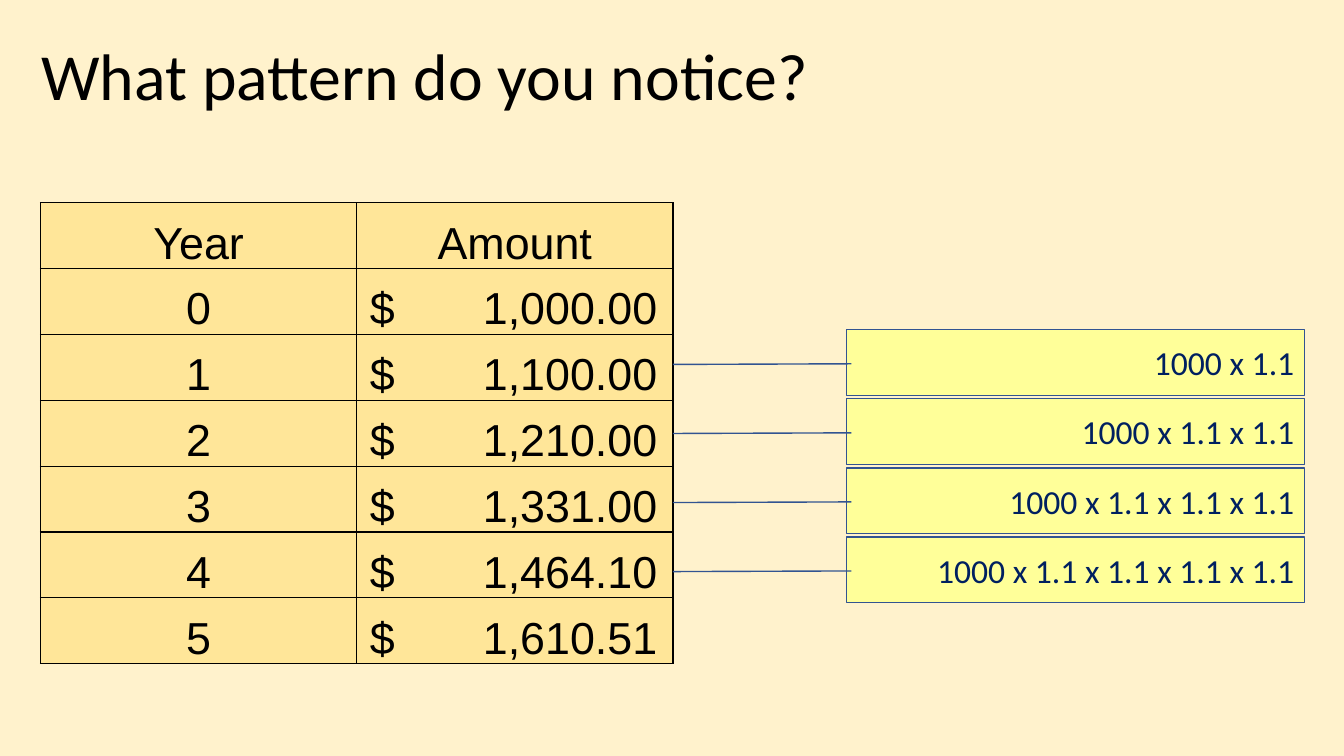
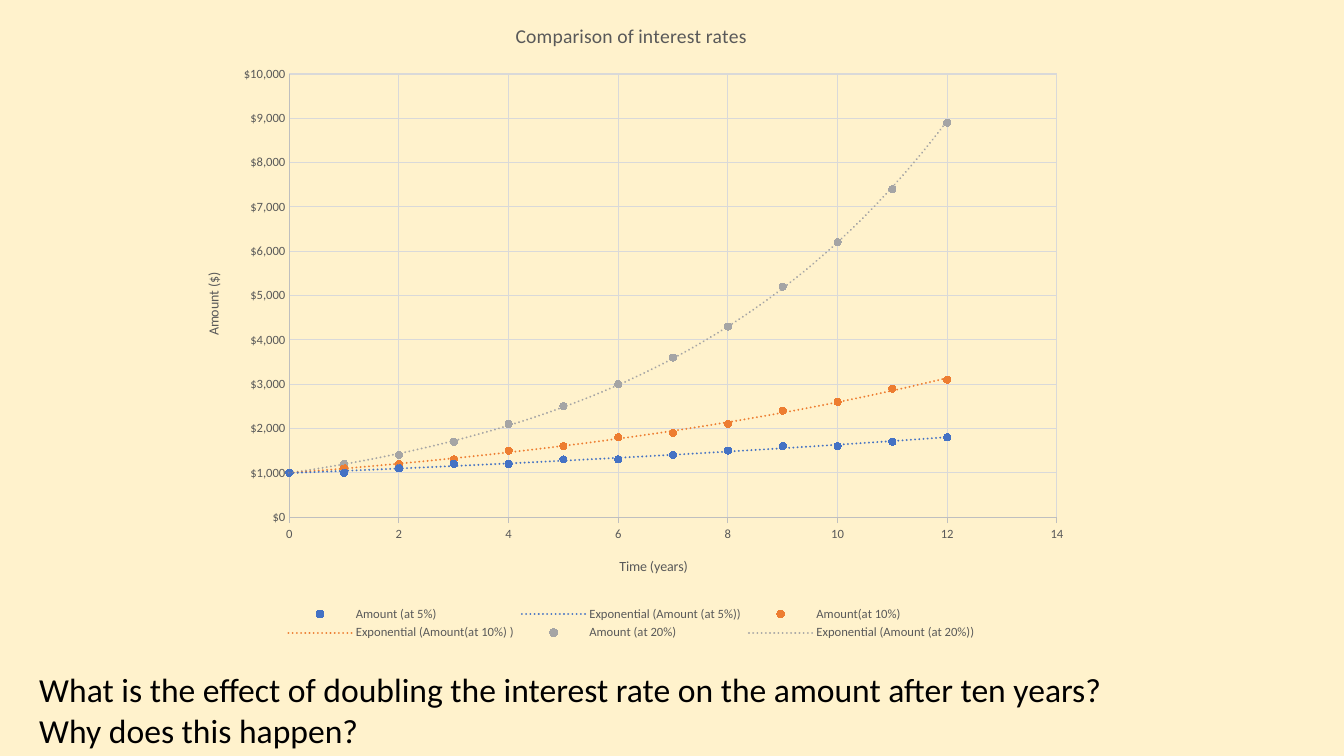
from dataclasses import dataclass

from lxml.etree import SubElement
from pptx import Presentation
from pptx.chart.data import XyChartData
from pptx.dml.color import RGBColor
from pptx.enum.chart import XL_CHART_TYPE, XL_LEGEND_POSITION, XL_MARKER_STYLE, XL_TICK_MARK
from pptx.enum.shapes import MSO_SHAPE
from pptx.enum.text import MSO_ANCHOR, PP_ALIGN
from pptx.oxml import parse_xml
from pptx.oxml.ns import nsdecls, qn
from pptx.util import Cm, Pt

CREAM = RGBColor(0xFF, 0xF2, 0xCC)
GOLD = RGBColor(0xFF, 0xE6, 0x99)
YELLOW = RGBColor(0xFF, 0xFF, 0x99)
BLACK = RGBColor(0x00, 0x00, 0x00)
NAVY = RGBColor(0x00, 0x20, 0x60)
CALLOUT_EDGE = RGBColor(0x32, 0x54, 0x91)
GREY_TEXT = RGBColor(0x59, 0x59, 0x59)
AXIS_GREY = RGBColor(0xBF, 0xBF, 0xBF)
GRID_GREY = RGBColor(0xD9, 0xD9, 0xD9)
BLUE = RGBColor(0x44, 0x72, 0xC4)
ORANGE = RGBColor(0xED, 0x7D, 0x31)
SILVER = RGBColor(0xA5, 0xA5, 0xA5)

BODY_FONT = "Calibri"
TABLE_FONT = "Arial"
PRINCIPAL = 1000
TABLE_YEARS = range(6)
CALLOUT_YEARS = range(1, 5)
CHART_YEARS = range(13)


@dataclass(frozen=True)
class Box:
    left: float
    top: float
    width: float
    height: float

    def lengths(self) -> tuple:
        return Cm(self.left), Cm(self.top), Cm(self.width), Cm(self.height)


@dataclass(frozen=True)
class RateSeries:
    name: str
    growth: float
    color: RGBColor


@dataclass(frozen=True)
class AxisStyle:
    title: str
    maximum: int
    step: int
    number_format: str
    tick: XL_TICK_MARK


TITLE_BOX = Box(0.79, 0.74, 28.75, 2.26)
TABLE_BOX = Box(1.02, 5.11, 15.94, 11.62)
FIRST_CALLOUT = Box(21.34, 8.31, 11.53, 1.65)
CALLOUT_PITCH = 1.74
CALLOUT_ADJUSTMENTS = (0.52, 0.01, 0.53, -0.38)
CHART_BOX = Box(4.57, 0, 22.68, 16.23)
QUESTION_BOX = Box(0.74, 16.74, 33.12, 2.31)
PLOT_AREA = {"x": 0.12, "y": 0.115, "w": 0.853, "h": 0.688}

RATES = (
    RateSeries("Amount (at 5%)", 1.05, BLUE),
    RateSeries("Amount(at 10%) ", 1.1, ORANGE),
    RateSeries("Amount (at 20%)", 1.2, SILVER),
)
TIME_AXIS = AxisStyle("Time (years)", 14, 2, "General", XL_TICK_MARK.OUTSIDE)
AMOUNT_AXIS = AxisStyle("Amount ($)", 10000, 1000, '"$"#,##0', XL_TICK_MARK.NONE)


def amount_after(years: int, growth: float) -> float:
    return PRINCIPAL * growth ** years


def set_font(font, size: float, color: RGBColor, name: str = BODY_FONT) -> None:
    font.name = name
    font.size = Pt(size)
    font.bold = False
    font.color.rgb = color


def write(frame, text: str, size: float, color: RGBColor, name: str = BODY_FONT,
          align: PP_ALIGN = PP_ALIGN.LEFT) -> None:
    frame.text = text
    frame.word_wrap = True
    for para in frame.paragraphs:
        para.alignment = align
        for span in para.runs:
            set_font(span.font, size, color, name)


def set_line(line, color: RGBColor, width: float) -> None:
    line.color.rgb = color
    line.width = Pt(width)


def add_title(page, text: str) -> None:
    title = page.shapes.title
    title.left, title.top, title.width, title.height = TITLE_BOX.lengths()
    write(title.text_frame, text, 47, BLACK)
    title.text_frame.vertical_anchor = MSO_ANCHOR.TOP


def add_cell_borders(cell) -> None:
    properties = cell._tc.get_or_add_tcPr()
    for index, side in enumerate(("lnL", "lnR", "lnT", "lnB")):
        properties.insert(index, parse_xml(
            f'<a:{side} {nsdecls("a")} w="{Pt(1)}"><a:solidFill>'
            f'<a:srgbClr val="{BLACK}"/></a:solidFill></a:{side}>'))


def add_right_tab(para, position: float) -> None:
    tabs = SubElement(para._p.get_or_add_pPr(), qn("a:tabLst"))
    SubElement(tabs, qn("a:tab"), pos=str(Cm(position)), algn="r")


def add_amount_table(page) -> None:
    rows = [("Year", "Amount")]
    rows += [(str(year), f"$\t{amount_after(year, 1.1):,.2f}") for year in TABLE_YEARS]
    table = page.shapes.add_table(len(rows), 2, *TABLE_BOX.lengths()).table
    table.first_row = table.horz_banding = False
    for row_index, row in enumerate(rows):
        for column_index, text in enumerate(row):
            cell = table.cell(row_index, column_index)
            is_money = "\t" in text
            cell.fill.solid()
            cell.fill.fore_color.rgb = GOLD
            cell.vertical_anchor = MSO_ANCHOR.BOTTOM
            cell.margin_left = Cm(0.33 if is_money else 0.03)
            cell.margin_right = cell.margin_top = Cm(0.03)
            cell.margin_bottom = 0
            write(cell.text_frame, text, 32, BLACK, TABLE_FONT,
                  PP_ALIGN.LEFT if is_money else PP_ALIGN.CENTER)
            if is_money:
                add_right_tab(cell.text_frame.paragraphs[0], 7.25)
            add_cell_borders(cell)


def add_callout(page, box: Box, text: str) -> None:
    callout = page.shapes.add_shape(MSO_SHAPE.LINE_CALLOUT_1, *box.lengths())
    for index, value in enumerate(CALLOUT_ADJUSTMENTS):
        callout.adjustments[index] = value
    callout.shadow.inherit = False
    callout.fill.solid()
    callout.fill.fore_color.rgb = YELLOW
    set_line(callout.line, CALLOUT_EDGE, 1)
    callout.text_frame.vertical_anchor = MSO_ANCHOR.MIDDLE
    write(callout.text_frame, text, 24, NAVY, align=PP_ALIGN.RIGHT)


def style_axis(axis, style: AxisStyle) -> None:
    axis.minimum_scale = 0
    axis.maximum_scale = style.maximum
    axis.major_unit = style.step
    axis.major_tick_mark = style.tick
    axis.minor_tick_mark = XL_TICK_MARK.NONE
    axis.has_major_gridlines = True
    set_line(axis.major_gridlines.format.line, GRID_GREY, 0.75)
    set_line(axis.format.line, AXIS_GREY, 0.75)
    labels = axis.tick_labels
    labels.number_format = style.number_format
    labels.number_format_is_linked = False
    set_font(labels.font, 9, GREY_TEXT)
    write(axis.axis_title.text_frame, style.title, 10, GREY_TEXT, align=PP_ALIGN.CENTER)


def add_exponential_trend(series, color: RGBColor) -> None:
    series._element.find(qn("c:xVal")).addprevious(parse_xml(
        f'<c:trendline {nsdecls("c", "a")}><c:spPr><a:ln w="{Pt(1.5)}" cap="rnd">'
        f'<a:solidFill><a:srgbClr val="{color}"/></a:solidFill><a:prstDash val="sysDot"/>'
        '</a:ln></c:spPr><c:trendlineType val="exp"/><c:dispRSqr val="0"/>'
        '<c:dispEq val="0"/></c:trendline>'))


def place_plot_area(chart) -> None:
    """Fix the inner plot area as fractions of the chart."""
    plot_area = chart._chartSpace.chart.plotArea
    for layout in plot_area.findall(qn("c:layout")):
        plot_area.remove(layout)
    modes = '<c:xMode val="edge"/><c:yMode val="edge"/>'
    sizes = "".join(f'<c:{key} val="{value}"/>' for key, value in PLOT_AREA.items())
    plot_area.insert(0, parse_xml(
        f'<c:layout {nsdecls("c")}><c:manualLayout><c:layoutTarget val="inner"/>'
        f'{modes}{sizes}</c:manualLayout></c:layout>'))


def add_rate_chart(page) -> None:
    data = XyChartData()
    for rate in RATES:
        points = data.add_series(rate.name)
        for year in CHART_YEARS:
            points.add_data_point(year, round(amount_after(year, rate.growth), -2))
    chart = page.shapes.add_chart(XL_CHART_TYPE.XY_SCATTER, *CHART_BOX.lengths(), data).chart
    set_font(chart.font, 10, BLACK)
    write(chart.chart_title.text_frame, "Comparison of interest rates", 14, GREY_TEXT,
          align=PP_ALIGN.CENTER)
    chart.has_legend = True
    chart.legend.position = XL_LEGEND_POSITION.BOTTOM
    chart.legend.include_in_layout = False
    set_font(chart.legend.font, 9, GREY_TEXT)
    style_axis(chart.category_axis, TIME_AXIS)
    style_axis(chart.value_axis, AMOUNT_AXIS)
    plot = chart.plots[0]
    plot.vary_by_categories = False
    for series, rate in zip(plot.series, RATES):
        series.format.line.fill.background()
        series.marker.style = XL_MARKER_STYLE.CIRCLE
        series.marker.size = 5
        series.marker.format.fill.solid()
        series.marker.format.fill.fore_color.rgb = rate.color
        set_line(series.marker.format.line, rate.color, 0.75)
        add_exponential_trend(series, rate.color)
    place_plot_area(chart)


def build_pattern_slide(deck) -> None:
    page = deck.slides.add_slide(deck.slide_layouts.get_by_name("Title Only"))
    add_title(page, "What pattern do you notice?")
    add_amount_table(page)
    first = FIRST_CALLOUT
    for index, years in enumerate(CALLOUT_YEARS):
        box = Box(first.left, first.top + index * CALLOUT_PITCH, first.width, first.height)
        add_callout(page, box, " x ".join([str(PRINCIPAL)] + ["1.1"] * years))


def build_comparison_slide(deck) -> None:
    page = deck.slides.add_slide(deck.slide_layouts.get_by_name("Blank"))
    add_rate_chart(page)
    question = page.shapes.add_textbox(*QUESTION_BOX.lengths())
    write(question.text_frame,
          "What is the effect of doubling the interest rate on the amount after ten years?\n"
          "Why does this happen?", 24, BLACK)


def main() -> None:
    deck = Presentation()
    deck.slide_width, deck.slide_height = Cm(33.87), Cm(19.05)
    background = deck.slide_master.background.fill
    background.solid()
    background.fore_color.rgb = CREAM
    build_pattern_slide(deck)
    build_comparison_slide(deck)
    deck.save("out.pptx")


if __name__ == "__main__":
    main()
